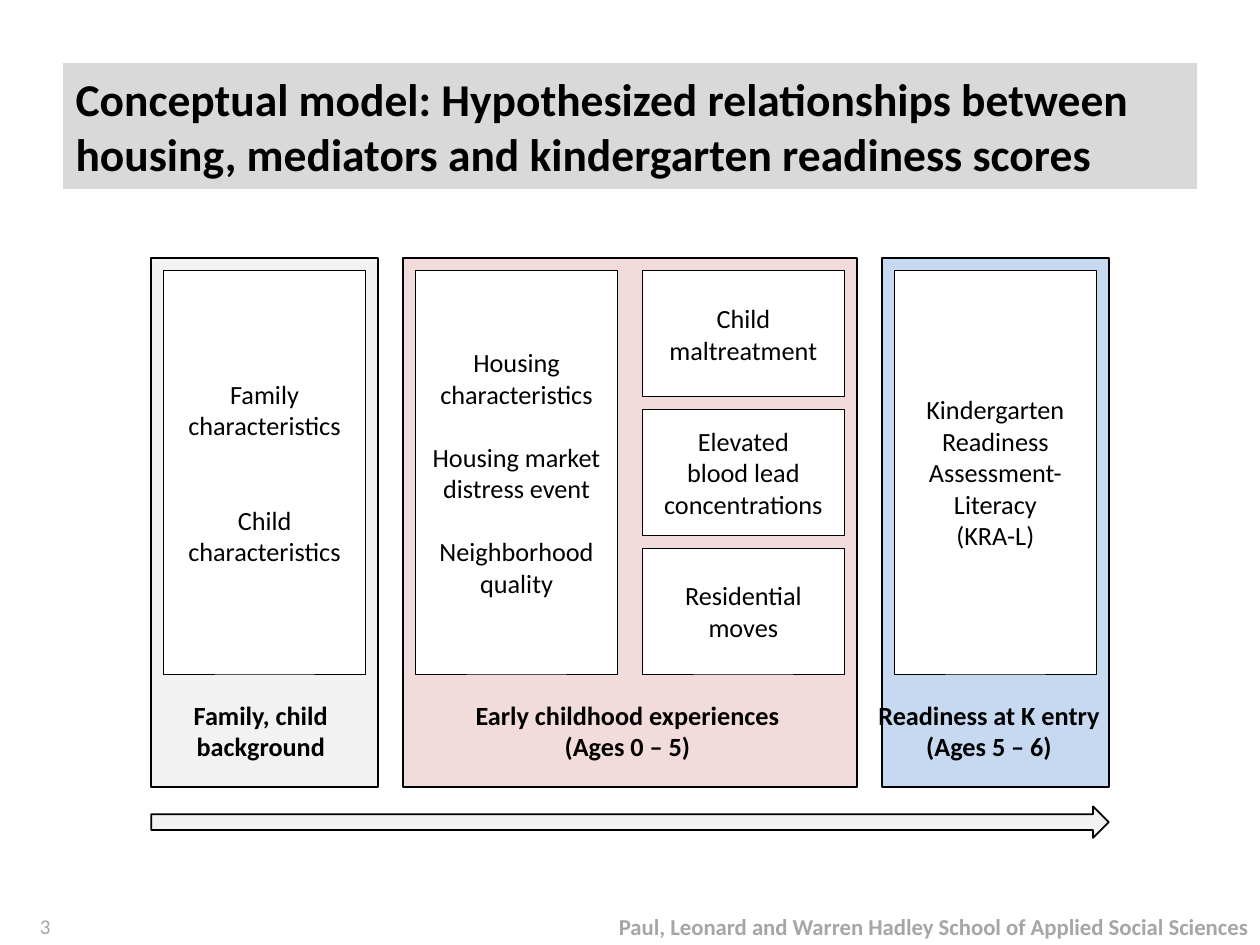
"""Build the conceptual model slide on housing and kindergarten readiness."""
from pptx import Presentation
from pptx.dml.color import RGBColor
from pptx.enum.shapes import MSO_SHAPE
from pptx.enum.text import MSO_ANCHOR, MSO_AUTO_SIZE, PP_ALIGN
from pptx.util import Pt

RECT, ARROW = MSO_SHAPE.RECTANGLE, MSO_SHAPE.RIGHT_ARROW
LEFT, CENTER, RIGHT = PP_ALIGN.LEFT, PP_ALIGN.CENTER, PP_ALIGN.RIGHT
MIDDLE, NO_FIT = MSO_ANCHOR.MIDDLE, MSO_AUTO_SIZE.NONE
PX = 9144
BLACK, WHITE, GREY = "000000", "FFFFFF", "A6A6A6"
LINE_GAP = 18


def write(target, lines, align=CENTER, size=15, bold=False, color=BLACK):
    frame = target.text_frame
    for key, value in {"word_wrap": True, "auto_size": NO_FIT, "vertical_anchor": MIDDLE}.items():
        setattr(frame, key, value)
    for index, (text, gap) in enumerate(lines):
        paragraph = frame.paragraphs[0] if index == 0 else frame.add_paragraph()
        paragraph.text = text
        paragraph.alignment = align
        paragraph.space_before = Pt(gap)
        for key, value in {"name": "Calibri", "size": Pt(size), "bold": bold}.items():
            setattr(paragraph.font, key, value)
        paragraph.font.color.rgb = RGBColor.from_string(color)


def add_block(kind, box, fill, line_width):
    block = slide.shapes.add_shape(kind, *[v * PX for v in box])
    block.shadow.inherit = False
    block.fill.solid()
    block.fill.fore_color.rgb = RGBColor.from_string(fill)
    block.line.color.rgb = RGBColor.from_string(BLACK)
    block.line.width = Pt(line_width)
    return block


deck = Presentation()
deck.slide_width, deck.slide_height = 1000 * PX, 750 * PX
slide = deck.slides.add_slide(deck.slide_layouts[5])

title = slide.shapes.title
for side, length in {"left": 50, "top": 50, "width": 900, "height": 100}.items():
    setattr(title, side, length * PX)
title.fill.solid()
title.fill.fore_color.rgb = RGBColor.from_string("D9D9D9")
heading = ("Conceptual model: Hypothesized relationships between "
           "housing, mediators and kindergarten readiness scores")
write(title, [(heading, 0)], LEFT, 26, True)

stages = [(120, 180, "F2F2F2"), (320, 360, "F2DCDB"), (700, 180, "C6D9F1")]
for left, width, fill in stages:
    add_block(RECT, (left, 205, width, 420), fill, 1.25)

factors = [
    (130, [("Family characteristics", 0), ("Child characteristics", 2 * LINE_GAP)]),
    (330, [("Housing characteristics", 0), ("Housing market", LINE_GAP),
           ("distress event", 0), ("Neighborhood quality", LINE_GAP)]),
    (710, [("Kindergarten Readiness Assessment- Literacy", 0), ("(KRA-L)", 0)]),
]
for left, lines in factors:
    write(add_block(RECT, (left, 215, 160, 320), WHITE, 0.5), lines)

mediators = [["Child maltreatment"], ["Elevated", "blood lead concentrations"], ["Residential moves"]]
for row, lines in enumerate(mediators):
    mediator = add_block(RECT, (510, 215 + 110 * row, 160, 100), WHITE, 0.5)
    write(mediator, [(line, 0) for line in lines])

add_block(ARROW, (120, 640, 760, 25), "F2F2F2", 1)

caption = {"bold": True}
school = "Paul, Leonard and Warren Hadley School of Applied Social Sciences"
labels = [
    ((120, 545, 174, 70), ["Family, child", "background"], caption),
    ((340, 545, 316, 70), ["Early childhood experiences", "(Ages 0 – 5)"], caption),
    ((670, 545, 230, 70), ["Readiness at K entry", "(Ages 5 – 6)"], caption),
    ((400, 720, 600, 30), [school], {"align": RIGHT, "size": 13, "bold": True, "color": GREY}),
    ((0, 720, 50, 30), ["3"], {"align": RIGHT, "size": 12, "color": GREY}),
]
for box, lines, style in labels:
    label = slide.shapes.add_textbox(*[v * PX for v in box])
    write(label, [(line, 0) for line in lines], **style)

deck.save("out.pptx")
